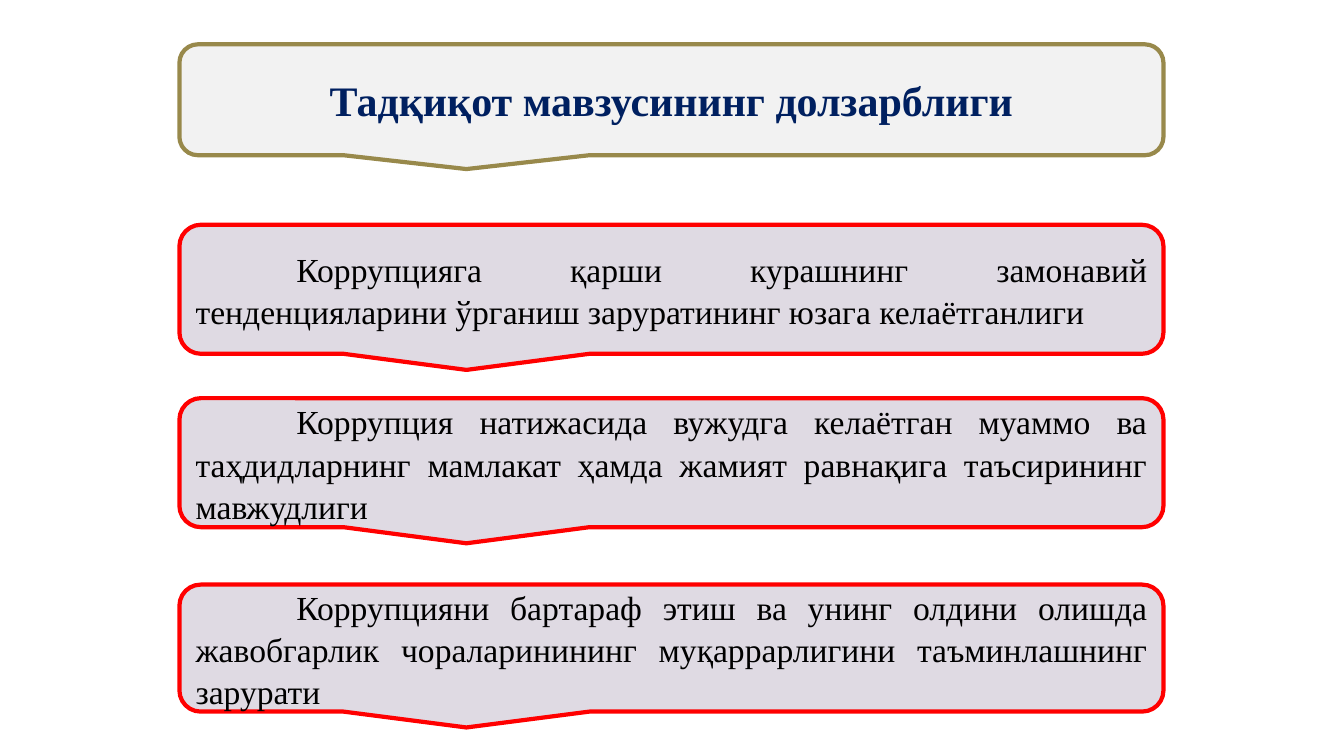
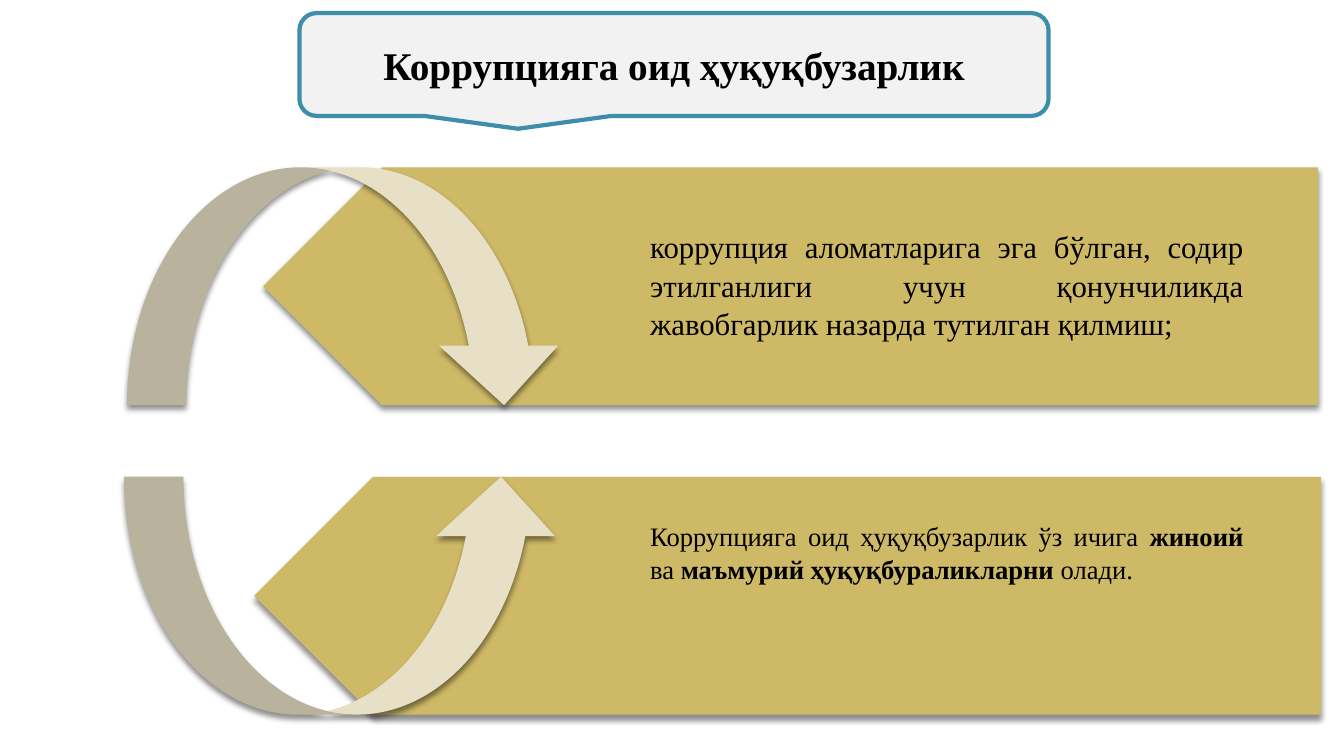
from lxml import etree
from pptx import Presentation
from pptx.dml.color import RGBColor
from pptx.enum.shapes import MSO_SHAPE as Shape
from pptx.enum.text import MSO_ANCHOR as Anchor, MSO_AUTO_SIZE as AutoSize, PP_ALIGN as Align
from pptx.oxml.ns import qn
from pptx.util import Inches, Pt

FONT = "Times New Roman"
COLORS = {
    "title_fill": "F2F2F2", "olive": "98894B", "teal": "3E8EA9",
    "navy": "002060", "black": "000000",
    "reason_fill": "DFDAE3", "red": "FF0000",
    "band": "CEB966", "arrow": "E8E0C6",
}

RELEVANCE = {
    "title": "Тадқиқот мавзусининг долзарблиги",
    "box": (1.78, 0.44, 9.76, 1.1), "line": "olive", "color": "navy", "size": 30,
}
REASONS = [
    (2.23, 1.28, "Коррупцияга қарши курашнинг замонавий тенденцияларини ўрганиш "
                 "заруратининг юзага келаётганлиги"),
    (3.95, 1.28, "Коррупция натижасида вужудга келаётган муаммо ва таҳдидларнинг "
                 "мамлакат ҳамда жамият равнақига таъсирининг мавжудлиги"),
    (5.8, 1.26, "Коррупцияни бартараф этиш ва унинг олдини олишда жавобгарлик "
                "чораларинининг муқаррарлигини таъминлашнинг зарурати"),
]

OFFENCE = {
    "title": "Коррупцияга оид ҳуқуқбузарлик",
    "box": (2.97, 0.13, 7.43, 1.02), "line": "teal", "color": "black", "size": 28,
}
DEFINITIONS = [
    {"top": 1.66, "band": (2.61, 10.46), "arrow": (1.26, Shape.CURVED_DOWN_ARROW),
     "text": (2.19, 1.21), "size": 22,
     "runs": [("коррупция аломатларига эга бўлган, содир этилганлиги учун "
               "қонунчиликда жавобгарлик назарда тутилган қилмиш;", False)]},
    {"top": 4.73, "band": (2.52, 10.58), "arrow": (1.23, Shape.CURVED_UP_ARROW),
     "text": (5.09, 0.74), "size": 19,
     "runs": [("Коррупцияга оид ҳуқуқбузарлик ўз ичига ", False), ("жиноий ", True),
              ("ва ", False), ("маъмурий ҳуқуқбураликларни ", True), ("олади.", False)]},
]
BAND_HEIGHT, ARROW_WIDTH = 2.36, 4.33
TEXT_LEFT, TEXT_WIDTH = 6.35, 6.08


def rgb(name):
    return RGBColor.from_string(COLORS[name])


def add_filled(slide, kind, box, fill, line=None):
    shape = slide.shapes.add_shape(kind, *map(Inches, box))
    shape.shadow.inherit = False
    shape.fill.solid()
    shape.fill.fore_color.rgb = rgb(fill)
    if line:
        shape.line.color.rgb = rgb(line)
        shape.line.width = Pt(3)
    else:
        shape.line.fill.background()
    return shape


def write(frame, runs, size, align, color="black", spacing=1.05, indent=0):
    frame.word_wrap = True
    paragraph = frame.paragraphs[0]
    paragraph.alignment = align
    paragraph.line_spacing = spacing
    if indent:
        paragraph._p.get_or_add_pPr().set("indent", str(Inches(indent)))
    for text, bold in runs:
        run = paragraph.add_run()
        run.text = text
        run.font.name = FONT
        run.font.size = Pt(size)
        run.font.bold = bold
        run.font.color.rgb = rgb(color)


def drop_shadow(shape):
    effects = shape.element.spPr.find(qn("a:effectLst"))
    shadow = etree.SubElement(effects, qn("a:outerShdw"), blurRad=str(Pt(4)),
                              dist=str(Pt(3)), dir="5400000", rotWithShape="0")
    tint = etree.SubElement(shadow, qn("a:srgbClr"), val=COLORS["black"])
    etree.SubElement(tint, qn("a:alpha"), val="43000")


def titled_slide(deck, heading):
    slide = deck.slides.add_slide(deck.slide_layouts[5])
    add_filled(slide, Shape.ROUNDED_RECTANGULAR_CALLOUT, heading["box"],
               "title_fill", heading["line"])
    title = slide.shapes.title
    slide.shapes.element.append(title.element)
    title.left, title.top, title.width, title.height = map(Inches, heading["box"])
    title.text_frame.auto_size = AutoSize.NONE
    title.text_frame.vertical_anchor = Anchor.MIDDLE
    write(title.text_frame, [(heading["title"], True)], heading["size"],
          Align.CENTER, heading["color"], spacing=1)
    return slide


def relevance_slide(deck):
    slide = titled_slide(deck, RELEVANCE)
    left, _, width, _ = RELEVANCE["box"]
    for top, height, reason in REASONS:
        callout = add_filled(slide, Shape.ROUNDED_RECTANGULAR_CALLOUT,
                             (left, top, width, height), "reason_fill", "red")
        callout.text_frame.vertical_anchor = Anchor.MIDDLE
        write(callout.text_frame, [(reason, False)], 24, Align.JUSTIFY, indent=1)


def offence_slide(deck):
    slide = titled_slide(deck, OFFENCE)
    for item in DEFINITIONS:
        left, width = item["band"]
        band = add_filled(slide, Shape.PENTAGON,
                          (left, item["top"], width, BAND_HEIGHT), "band")
        band.rotation = 180
        arrow_left, arrow_kind = item["arrow"]
        arrow = add_filled(slide, arrow_kind,
                           (arrow_left, item["top"], ARROW_WIDTH, BAND_HEIGHT), "arrow")
        drop_shadow(band)
        drop_shadow(arrow)
        top, height = item["text"]
        definition = slide.shapes.add_textbox(
            *map(Inches, (TEXT_LEFT, top, TEXT_WIDTH, height)))
        definition.text_frame.auto_size = AutoSize.SHAPE_TO_FIT_TEXT
        write(definition.text_frame, item["runs"], item["size"], Align.JUSTIFY)


def main():
    deck = Presentation()
    deck.slide_width, deck.slide_height = Inches(13.33), Inches(7.5)
    relevance_slide(deck)
    offence_slide(deck)
    deck.save("out.pptx")


if __name__ == "__main__":
    main()
